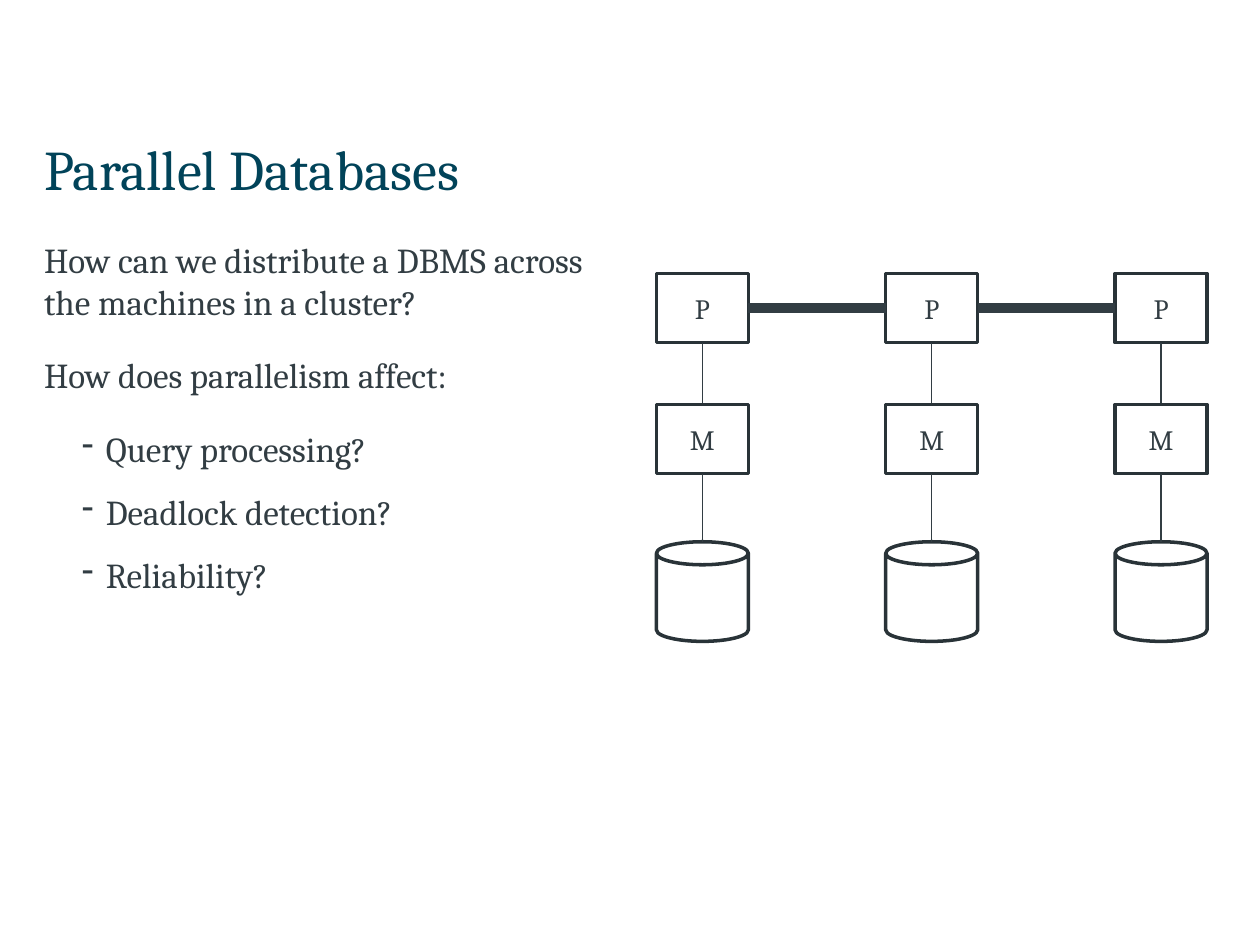
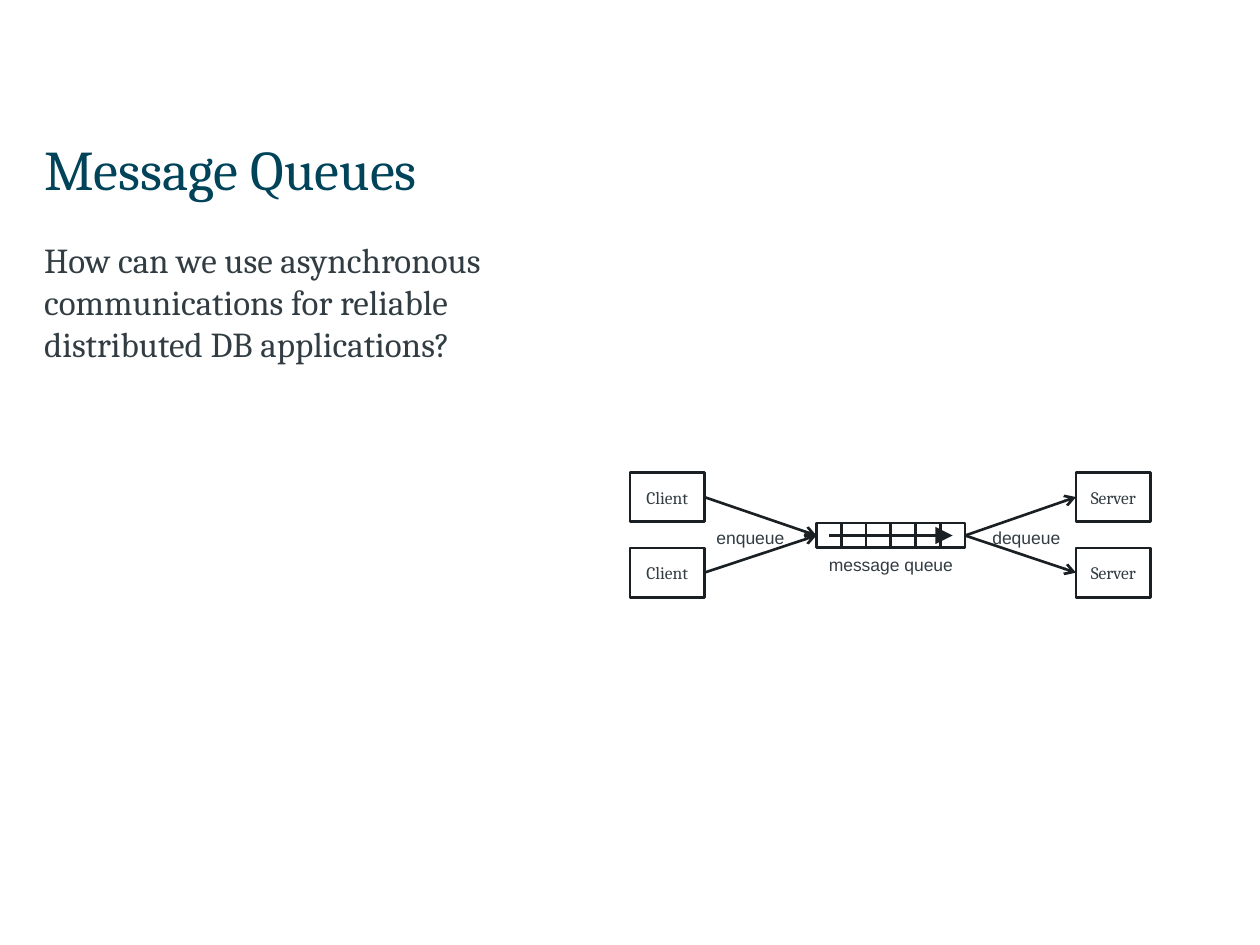
from dataclasses import dataclass

from lxml import etree
from pptx import Presentation
from pptx.dml.color import RGBColor
from pptx.enum.shapes import MSO_CONNECTOR, MSO_SHAPE
from pptx.enum.text import MSO_ANCHOR, MSO_AUTO_SIZE, PP_ALIGN
from pptx.oxml.ns import qn
from pptx.util import Inches, Pt

RECT, CAN = MSO_SHAPE.RECTANGLE, MSO_SHAPE.CAN
STRAIGHT = MSO_CONNECTOR.STRAIGHT
TOP, MIDDLE = MSO_ANCHOR.TOP, MSO_ANCHOR.MIDDLE
LEFT, CENTER = PP_ALIGN.LEFT, PP_ALIGN.CENTER
NO_FIT = MSO_AUTO_SIZE.NONE
TITLE_ONLY = 5


@dataclass(frozen=True)
class Theme:
    serif: str = "Cambria"
    sans: str = "Arial"
    title: str = "014359"
    text: str = "323D43"
    edge: str = "293338"
    ink: str = "191F22"
    paper: str = "FFFFFF"
    title_size: float = 32
    body_size: float = 20
    node_size: float = 16
    small_size: float = 10
    node_line: float = 2
    bus_line: float = 6
    thin_line: float = 0.75
    flow_line: float = 1.5


THEME = Theme()


def rgb(code):
    return RGBColor.from_string(code)


def apply(target, values):
    for name, value in values.items():
        setattr(target, name, value)


def set_font(para, size, color=THEME.text, name=THEME.serif):
    apply(para.font, {"name": name, "size": Pt(size), "bold": False})
    para.font.color.rgb = rgb(color)


def set_frame(frame, anchor, pads=(0.1, 0.05, 0.1, 0.05), wrap=True):
    """Pads are left, top, right and bottom, in inches."""
    sides = ("margin_left", "margin_top", "margin_right", "margin_bottom")
    apply(frame, dict(zip(sides, map(Inches, pads))))
    apply(frame, {"auto_size": NO_FIT, "word_wrap": wrap,
                  "vertical_anchor": anchor})


def set_text(frame, text, size, align=CENTER, **font):
    para = frame.paragraphs[0]
    para.text = text
    para.alignment = align
    set_font(para, size, **font)


def add_page(deck, title):
    page = deck.slides.add_slide(deck.slide_layouts[TITLE_ONLY])
    head = page.shapes.title
    apply(head, {"left": Inches(0.35), "top": Inches(0.98),
                 "width": Inches(9.29), "height": Inches(0.71)})
    set_frame(head.text_frame, MIDDLE, (0, 0.05, 0.1, 0.05))
    set_text(head.text_frame, title, THEME.title_size, LEFT,
             color=THEME.title)
    return page


def add_dash(para):
    props = para._p.get_or_add_pPr()
    props.set("marL", str(Inches(0.49)))
    props.set("indent", str(Inches(-0.19)))
    etree.SubElement(props, qn("a:buChar")).set("char", "-")


def add_body(page, lines, points=()):
    """Plain lines come first, then dashed points."""
    box = page.shapes.add_textbox(*map(Inches, (0.35, 1.84, 4.48, 4.91)))
    frame = box.text_frame
    set_frame(frame, TOP, (0, 0.05, 0.1, 0.05))
    for index, text in enumerate([*lines, *points]):
        para = frame.add_paragraph() if index else frame.paragraphs[0]
        para.text = text
        dashed = index >= len(lines)
        para.space_after = Pt(12 if dashed else 18)
        if dashed:
            add_dash(para)
        set_font(para, THEME.body_size)


def add_node(group, kind, area, color, width):
    node = group.shapes.add_shape(kind, *map(Inches, area))
    node.shadow.inherit = False
    node.fill.solid()
    node.fill.fore_color.rgb = rgb(THEME.paper)
    node.line.color.rgb = rgb(color)
    node.line.width = Pt(width)
    return node


def add_label(group, text, area):
    box = group.shapes.add_textbox(*map(Inches, area))
    set_frame(box.text_frame, TOP, wrap=False)
    set_text(box.text_frame, text, THEME.small_size, name=THEME.sans)


def add_link(group, start, end, color, width, head=None, size="med"):
    link = group.shapes.add_connector(STRAIGHT, *map(Inches, start + end))
    link.line.color.rgb = rgb(color)
    link.line.width = Pt(width)
    props = link._element.spPr
    if head:
        tip = etree.SubElement(props.find(qn("a:ln")), qn("a:tailEnd"))
        for key, value in {"type": head, "w": size, "len": size}.items():
            tip.set(key, value)
    etree.SubElement(props, qn("a:effectLst"))


def draw_cluster(page):
    """Three machines, each a processor over memory over a disk."""
    group = page.shapes.add_group_shape()
    wide, tall, step = 0.73, 0.55, 1.82
    cpu, mem, disk = 2.17, 3.21, 4.3
    lefts = [5.21 + step * i for i in range(3)]
    for left in lefts:
        add_node(group, CAN, (left, disk, wide, 0.79),
                 THEME.edge, THEME.node_line)
        for text, top, below in (("P", cpu, mem), ("M", mem, disk)):
            node = add_node(group, RECT, (left, top, wide, tall),
                            THEME.edge, THEME.node_line)
            set_frame(node.text_frame, MIDDLE)
            set_text(node.text_frame, text, THEME.node_size)
            mid = left + wide / 2
            add_link(group, (mid, top + tall), (mid, below),
                     THEME.text, THEME.thin_line)
    bus = cpu + tall / 2
    for left, right in zip(lefts, lefts[1:]):
        add_link(group, (left + wide, bus), (right, bus),
                 THEME.text, THEME.bus_line)


def draw_queue(page):
    group = page.shapes.add_group_shape()
    style = (THEME.ink, THEME.flow_line)
    start, end, mid, count = 6.48, 7.66, 4.25, 6
    cell = (end - start) / count
    for i in range(count):
        add_node(group, RECT, (start + cell * i, mid - cell / 2, cell, cell),
                 *style)
    add_link(group, (start + cell / 2, mid), (end - cell / 2, mid), *style,
             head="triangle", size="lg")

    client, server, wide, tall = 5, 8.54, 0.59, 0.39
    for top in (3.75, 4.35):
        for text, left in (("Client", client), ("Server", server)):
            node = add_node(group, RECT, (left, top, wide, tall), *style)
            set_frame(node.text_frame, MIDDLE, (0, 0, 0, 0), wrap=False)
            set_text(node.text_frame, text, THEME.small_size)
        side = top + tall / 2
        add_link(group, (client + wide, side), (start, mid), *style,
                 head="arrow")
        add_link(group, (end, mid), (server, side), *style, head="arrow")

    add_label(group, "message queue", (6.47, 4.35, 1.2, 0.27))
    add_label(group, "enqueue", (5.58, 4.13, 0.75, 0.27))
    add_label(group, "dequeue", (7.77, 4.13, 0.75, 0.27))


def main():
    deck = Presentation()
    apply(deck, {"slide_width": Inches(10), "slide_height": Inches(7.5)})

    page = add_page(deck, "Parallel Databases")
    add_body(page,
             ["How can we distribute a DBMS across the machines in a cluster?",
              "How does parallelism affect:"],
             ["Query processing?", "Deadlock detection?", "Reliability?"])
    draw_cluster(page)

    page = add_page(deck, "Message Queues")
    add_body(page, ["How can we use asynchronous communications for reliable "
                    "distributed DB applications?"])
    draw_queue(page)

    deck.save("out.pptx")


if __name__ == "__main__":
    main()
